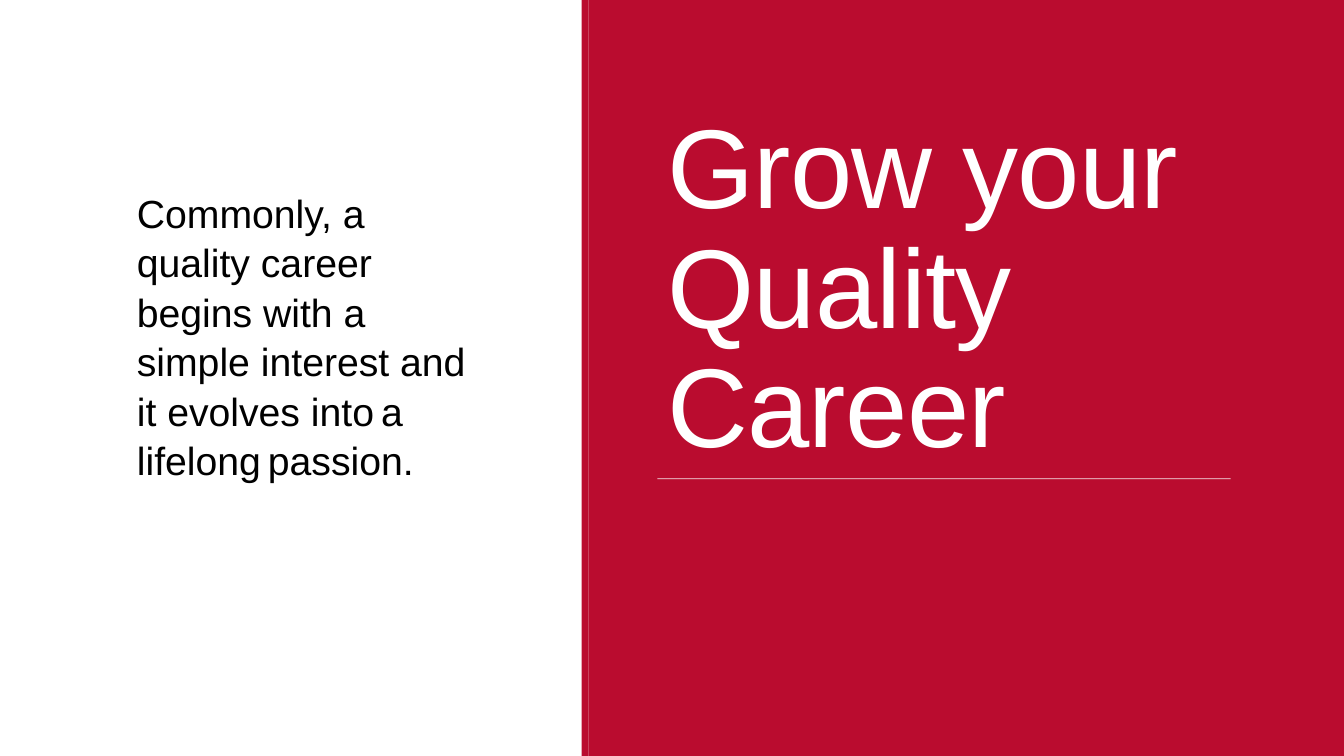
import pptx
import pptx.util
import pptx.dml.color
import pptx.enum.shapes
import pptx.enum.text
import pptx.oxml.ns
from dataclasses import dataclass
from lxml import etree

Pt = pptx.util.Pt


@dataclass(frozen=True)
class Theme:
    font: str = "Arial"
    red: str = "BA0C2F"
    white: str = "FFFFFF"
    black: str = "000000"
    title_size: int = 80
    body_size: int = 28
    gap_size: int = 18


THEME = Theme()
W, H = 960, 540
SPLIT = 415.5
STRIPE = 5


def rgb(value):
    return pptx.dml.color.RGBColor.from_string(value)


def add_bar(s, x, y, w, h):
    sp = s.shapes.add_shape(
        pptx.enum.shapes.MSO_SHAPE.RECTANGLE, Pt(x), Pt(y), Pt(w), Pt(h))
    sp.shadow.inherit = False
    sp.fill.solid()
    sp.fill.fore_color.rgb = rgb(THEME.red)
    sp.line.fill.background()


def add_text(s, x, y, w, h, parts, color, spacing):
    tf = s.shapes.add_textbox(Pt(x), Pt(y), Pt(w), Pt(h)).text_frame
    tf.word_wrap = True
    p = tf.paragraphs[0]
    p.line_spacing = spacing
    for text, size in parts:
        r = p.add_run()
        r.text = text
        r.font.name = THEME.font
        r.font.size = Pt(size)
        r.font.color.rgb = rgb(color)
    return tf


def add_rule(s, x, y, w):
    line = s.shapes.add_connector(
        pptx.enum.shapes.MSO_CONNECTOR.STRAIGHT, Pt(x), Pt(y), Pt(x + w), Pt(y))
    line.line.color.rgb = rgb(THEME.white)
    line.line.width = Pt(0.5)
    qn = pptx.oxml.ns.qn
    clr = line.line._ln.find(".//" + qn("a:srgbClr"))
    etree.SubElement(clr, qn("a:alpha")).set("val", "90000")
    etree.SubElement(line._element.spPr, qn("a:effectLst"))


def message_panel(s, x, y, w, h):
    words = ["Commonly, a quality career begins with a simple interest and it evolves into",
             "a", "lifelong", "passion."]
    parts = [(words[0], THEME.body_size)]
    for word in words[1:]:
        parts += [(" ", THEME.gap_size), (word, THEME.body_size)]
    tf = add_text(s, x + 90.7, y + 130, 249, 211, parts, THEME.black, 1.05)
    tf.auto_size = pptx.enum.text.MSO_AUTO_SIZE.SHAPE_TO_FIT_TEXT


def title_panel(s, x, y, w, h):
    add_bar(s, x, y, STRIPE, h)
    add_bar(s, x + STRIPE, y, w - STRIPE, h)
    tf = add_text(s, x + 54, y + 60, 436, 280.5,
                  [("Grow your Quality Career", THEME.title_size)], THEME.white, 0.89)
    tf.vertical_anchor = pptx.enum.text.MSO_ANCHOR.BOTTOM
    tf.paragraphs[0].runs[0].font._element.set("spc", "-50")
    add_rule(s, x + 54, y + 342, 409.5)


def main():
    prs = pptx.Presentation()
    prs.slide_width, prs.slide_height = Pt(W), Pt(H)
    s = prs.slides.add_slide(prs.slide_layouts[6])
    message_panel(s, 0, 0, SPLIT, H)
    title_panel(s, SPLIT, 0, W - SPLIT, H)
    prs.save("out.pptx")


if __name__ == "__main__":
    main()
